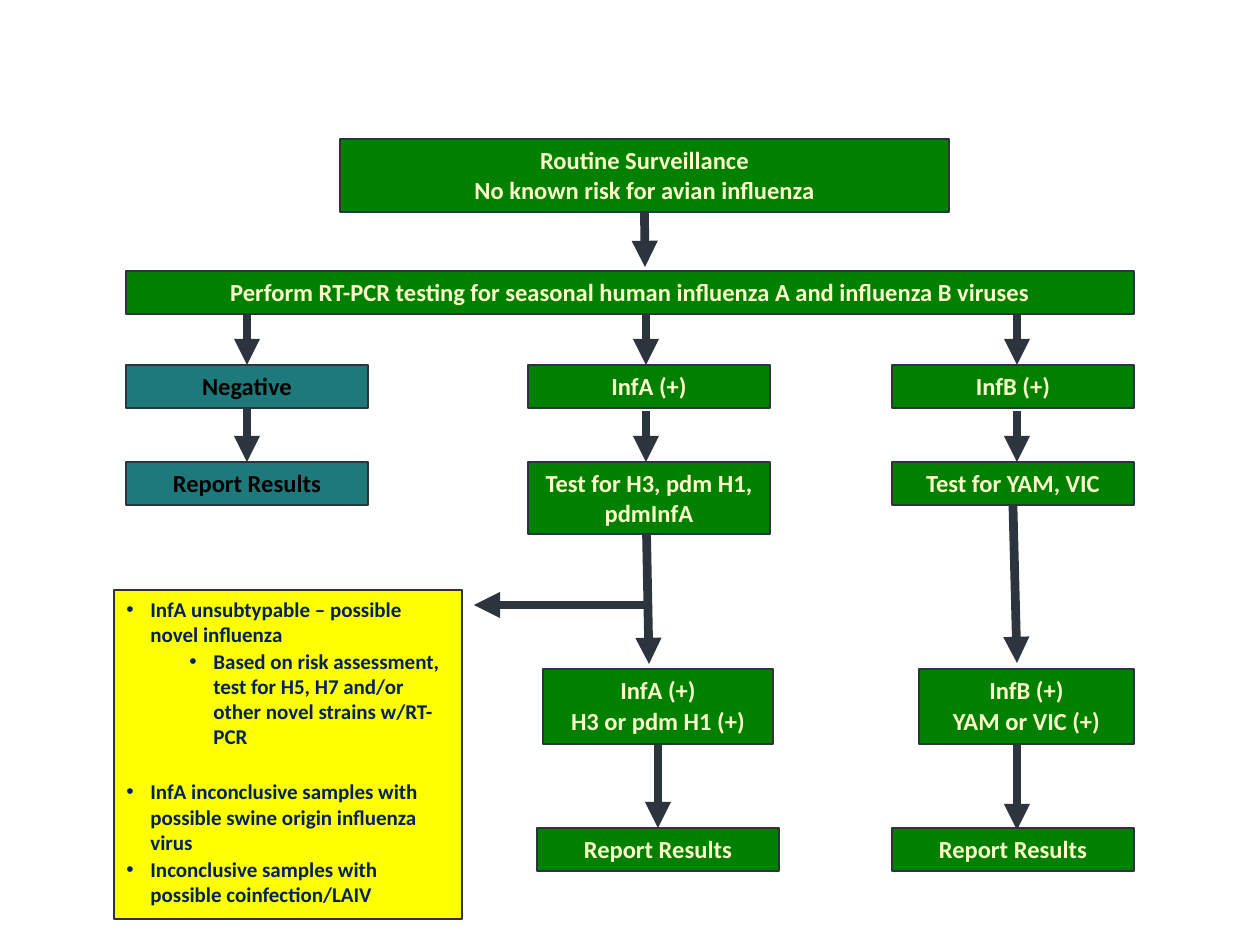
from dataclasses import dataclass
from lxml import etree
from pptx import Presentation
from pptx.dml.color import RGBColor
from pptx.enum.shapes import MSO_CONNECTOR, MSO_SHAPE
from pptx.enum.text import MSO_ANCHOR, MSO_AUTO_SIZE, PP_ALIGN
from pptx.oxml.ns import qn
from pptx.util import Emu, Pt

RECT = MSO_SHAPE.RECTANGLE
LINE = MSO_CONNECTOR.STRAIGHT
TOP = MSO_ANCHOR.TOP
GROW = MSO_AUTO_SIZE.SHAPE_TO_FIT_TEXT
LEFT, MID = PP_ALIGN.LEFT, PP_ALIGN.CENTER
ABOVE, BELOW = 0, 2


@dataclass(frozen=True)
class Theme:
    font: str = "Calibri"
    green: str = "008000"
    teal: str = "1D797C"
    yellow: str = "FFFF00"
    cream: str = "FFFFCC"
    black: str = "000000"
    navy: str = "002060"
    edge: str = "2C343E"
    step: int = 14
    note: int = 12
    thin: float = 0.75
    thick: int = 5


def px(n):
    return Emu(round(n * 914400 / 126))


def rgb(code):
    return RGBColor.from_string(code)


class Chart:
    def __init__(self, slide, theme):
        self.slide = slide
        self.theme = theme

    def rect(self, x, y, w, h, fill):
        box = self.slide.shapes.add_shape(RECT, px(x), px(y), px(w), px(h))
        box.shadow.inherit = False
        box.fill.solid()
        box.fill.fore_color.rgb = rgb(fill)
        box.line.color.rgb = rgb(self.theme.edge)
        box.line.width = Pt(self.theme.thin)
        frame = box.text_frame
        frame.word_wrap = True
        frame.vertical_anchor = TOP
        frame.auto_size = GROW
        return box

    def label(self, para, text, size, color, align, gap):
        para.text = text
        para.alignment = align
        para.space_before = Pt(gap)
        font = para.font
        font.name = self.theme.font
        font.size = Pt(size)
        font.bold = True
        font.color.rgb = rgb(color)

    def step(self, x, y, w, h, lines, gap=0, fill=None, color=None):
        look = self.theme
        box = self.rect(x, y, w, h, fill or look.green)
        frame = box.text_frame
        for i, text in enumerate(lines):
            para = frame.add_paragraph() if i else frame.paragraphs[0]
            self.label(para, text, look.step, color or look.cream, MID,
                       gap if i else 0)
        return box

    def notes(self, x, y, w, h, items):
        look = self.theme
        frame = self.rect(x, y, w, h, look.yellow).text_frame
        for i, (level, gap, text) in enumerate(items):
            para = frame.add_paragraph() if i else frame.paragraphs[0]
            para.level = level
            props = para._p.get_or_add_pPr()
            props.set("marL", str(px(24 + 63 * level)))
            props.set("indent", str(px(-24)))
            etree.SubElement(props, qn("a:buFont")).set("typeface", "Arial")
            etree.SubElement(props, qn("a:buChar")).set("char", "•")
            self.label(para, text, look.note, look.navy, LEFT, gap)

    def arrow(self, x1, y1, x2, y2, start=None, end=None):
        link = self.slide.shapes.add_connector(
            LINE, px(x1), px(y1), px(x2), px(y2))
        if start:
            link.begin_connect(start, BELOW)
        if end:
            link.end_connect(end, ABOVE)
        link.line.color.rgb = rgb(self.theme.edge)
        link.line.width = Pt(self.theme.thick)
        etree.SubElement(link.line._get_or_add_ln(),
                         qn("a:tailEnd")).set("type", "triangle")
        etree.SubElement(link._element.spPr, qn("a:effectLst"))


def main():
    deck = Presentation()
    deck.slide_width, deck.slide_height = px(1260), px(945)
    look = Theme()
    flow = Chart(deck.slides.add_slide(deck.slide_layouts[6]), look)

    wide, low = 242, 43
    col1, col2, col3 = 126, 528, 892
    row1, row2, row3, row4 = 365, 462, 669, 828
    mid, right = 646, 1017

    for x in (mid, right):
        flow.arrow(x, 314, x, row1)
        flow.arrow(x, 411, x, row2)
    flow.arrow(mid, 505, 649, 664)
    flow.arrow(651, 605, 474, 605)
    flow.arrow(right, 745, right, 830)

    top = flow.step(340, 139, 609, 73, [
        "Routine Surveillance", "No known risk for avian influenza"])
    flow.arrow(645, 213, 645, 267, start=top)
    flow.step(col1, 271, 1008, low, [
        "Perform RT-PCR testing for seasonal human influenza A "
        "and influenza B viruses"])

    dim = {"fill": look.teal, "color": look.black}
    clear = flow.step(col1, row1, wide, low, ["Negative"], **dim)
    done = flow.step(col1, row2, wide, low, ["Report Results"], **dim)
    flow.arrow(247, 314, 247, row1, end=clear)
    flow.arrow(247, 411, 247, row2, start=clear, end=done)

    flow.step(col2, row1, wide, low, ["InfA (+)"])
    flow.step(col2, row2, wide, 72, ["Test for H3, pdm H1, pdmInfA"])
    found = flow.step(543, row3, 230, 75,
                      ["InfA (+)", "H3 or pdm H1 (+)"], gap=1)
    final = flow.step(537, row4, wide, low, ["Report Results"])
    flow.arrow(658, 745, 658, row4, start=found, end=final)

    flow.step(col3, row1, wide, low, ["InfB (+)"])
    test = flow.step(col3, row2, wide, low, ["Test for YAM, VIC"])
    flow.step(919, row3, 215, 75, ["InfB (+)", "YAM or VIC (+)"], gap=1)
    flow.step(col3, row4, wide, low, ["Report Results"])
    flow.arrow(1013, 505, right, 663, start=test)

    flow.notes(114, 590, 348, 329, [
        (0, 0, "InfA unsubtypable – possible novel influenza"),
        (1, 1, "Based on risk assessment, test for H5, H7 and/or "
               "other novel strains w/RT-PCR"),
        (0, 17, "InfA inconclusive samples with possible swine origin "
                "influenza virus"),
        (0, 1, "Inconclusive samples with possible coinfection/LAIV"),
    ])
    deck.save("out.pptx")


if __name__ == "__main__":
    main()
